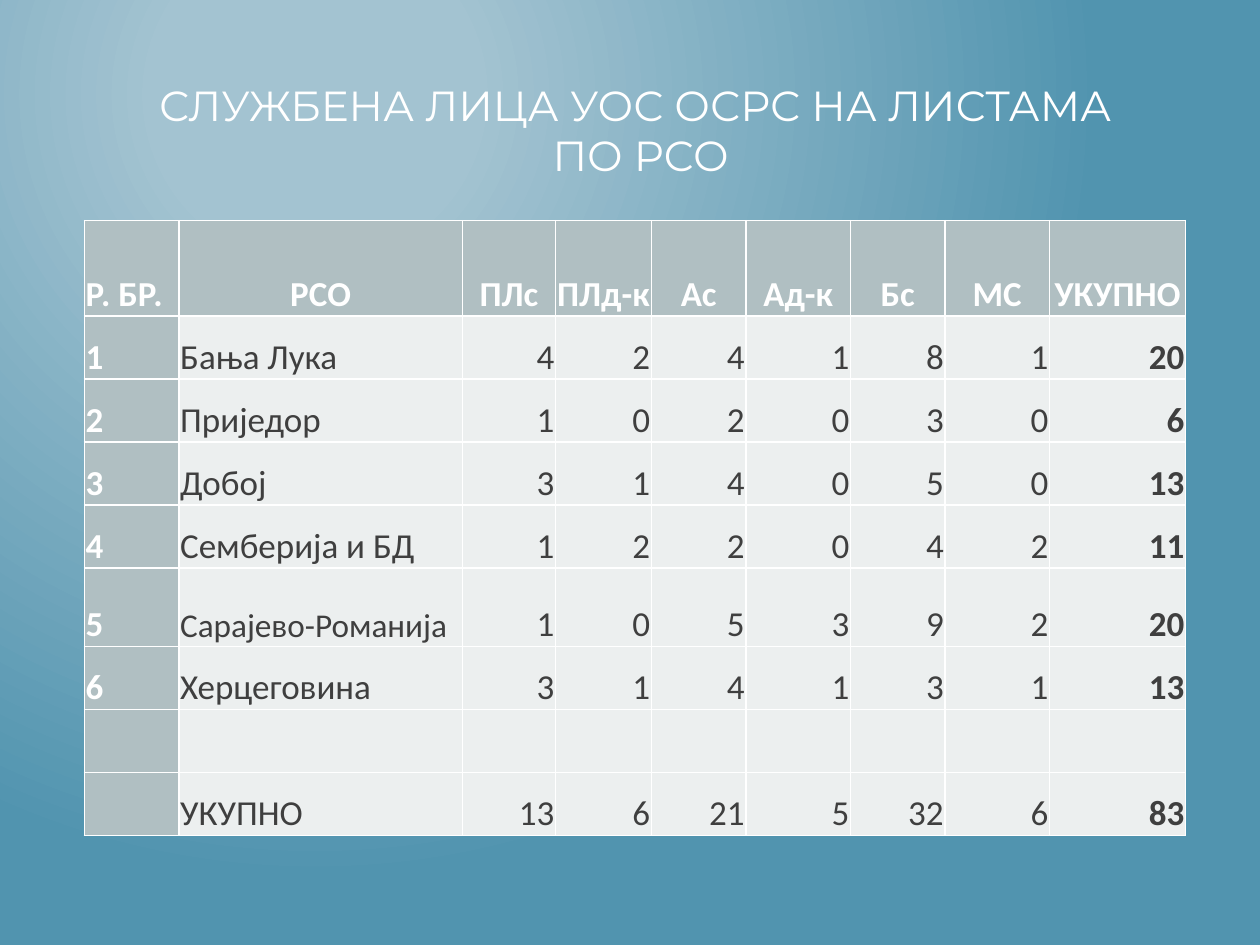
from pptx import Presentation
from pptx.dml.color import RGBColor
from pptx.enum.text import MSO_ANCHOR as Anchor, PP_ALIGN as Align
from pptx.oxml import parse_xml
from pptx.oxml.ns import nsdecls, qn
from pptx.util import Inches, Pt

TITLE = "СЛУЖБЕНА ЛИЦА УОС ОСРС НА ЛИСТАМА \vПО РСО"
ROWS = [
    ("Р. БР.", "РСО", "ПЛс", "ПЛд-к", "Ас", "Ад-к", "Бс", "МС", "УКУПНО"),
    (1, "Бања Лука", 4, 2, 4, 1, 8, 1, 20),
    (2, "Приједор", 1, 0, 2, 0, 3, 0, 6),
    (3, "Добој", 3, 1, 4, 0, 5, 0, 13),
    (4, "Семберија и БД", 1, 2, 2, 0, 4, 2, 11),
    (5, "Сарајево-Романија", 1, 0, 5, 3, 9, 2, 20),
    (6, "Херцеговина", 3, 1, 4, 1, 3, 1, 13),
    ("",) * 9,
    ("", "УКУПНО", 13, 6, 21, 5, 32, 6, 83),
]
COLUMN_WIDTHS = [0.75, 2.25, 0.74, 0.76, 0.75, 0.83, 0.75, 0.83, 1.08]
ROW_HEIGHTS = [0.76, 0.5, 0.5, 0.5, 0.5, 0.62, 0.5, 0.5, 0.5]
GRADIENT = [(0.2, "A3C3D1"), (1, "5194AF")]
WHITE, DARK, HEADING, BODY = "FFFFFF", "3F3F3F", "B0BFC2", "ECEFEF"


def color(value):
    return RGBColor.from_string(value)


def paint_background(slide):
    """Fill the slide with a circular gradient centred near the upper left."""
    fill = slide.background.fill
    fill.gradient()
    for stop, (position, value) in zip(fill.gradient_stops, GRADIENT):
        stop.position = position
        stop.color.rgb = color(value)
    linear = slide.element.find(".//" + qn("a:lin"))
    linear.getparent().replace(linear, parse_xml(
        f'<a:path {nsdecls("a")} path="circle">'
        '<a:fillToRect l="50000" t="20000" r="100000" b="100000"/></a:path>'))


def add_title(slide):
    title = slide.shapes.title
    title.left, title.top = Inches(1), Inches(0.58)
    title.width, title.height = Inches(8.17), Inches(1.25)
    frame = title.text_frame
    frame.margin_left = frame.margin_right = 0
    frame.margin_top = frame.margin_bottom = Inches(0.05)
    frame.vertical_anchor = Anchor.TOP
    frame.word_wrap = True
    para = frame.paragraphs[0]
    para.text = TITLE
    para.alignment = Align.CENTER
    para.font.name, para.font.size = "Montserrat", Pt(24)
    para.font.color.rgb = color(WHITE)


def add_borders(cell):
    properties = cell._tc.get_or_add_tcPr()
    for index, side in enumerate(("lnL", "lnR", "lnT", "lnB")):
        properties.insert(index, parse_xml(
            f'<a:{side} {nsdecls("a")} w="{Pt(1)}"><a:solidFill>'
            f'<a:srgbClr val="{WHITE}"/></a:solidFill></a:{side}>'))


def fill_cell(cell, value, row, column):
    heading = row == 0 or column == 0
    cell.fill.solid()
    cell.fill.fore_color.rgb = color(HEADING if heading else BODY)
    add_borders(cell)
    cell.vertical_anchor = Anchor.BOTTOM
    cell.margin_left = cell.margin_right = cell.margin_top = Inches(0.01)
    cell.margin_bottom = 0
    para = cell.text_frame.paragraphs[0]
    para.text = str(value)
    if column == 0 or (column == 1 and row > 0):
        para.alignment = Align.LEFT
    else:
        para.alignment = Align.CENTER if row == 0 else Align.RIGHT
    para.font.name = "Calibri"
    para.font.size = Pt(19 if value == "Сарајево-Романија" else 20)
    para.font.bold = heading or column == len(COLUMN_WIDTHS) - 1
    para.font.color.rgb = color(WHITE if heading else DARK)


def add_officials_table(slide):
    table = slide.shapes.add_table(
        len(ROWS), len(COLUMN_WIDTHS), Inches(0.67), Inches(1.75),
        Inches(sum(COLUMN_WIDTHS)), Inches(sum(ROW_HEIGHTS))).table
    table.first_col = True
    table.horz_banding = False
    for column, width in zip(table.columns, COLUMN_WIDTHS):
        column.width = Inches(width)
    for row, height in zip(table.rows, ROW_HEIGHTS):
        row.height = Inches(height)
    for r, values in enumerate(ROWS):
        for c, value in enumerate(values):
            fill_cell(table.cell(r, c), value, r, c)


def main():
    deck = Presentation()
    deck.slide_width, deck.slide_height = Inches(10), Inches(7.5)
    slide = deck.slides.add_slide(deck.slide_layouts[0])
    subtitle = slide.placeholders[1].element
    subtitle.getparent().remove(subtitle)
    paint_background(slide)
    add_title(slide)
    add_officials_table(slide)
    deck.save("out.pptx")


if __name__ == "__main__":
    main()
